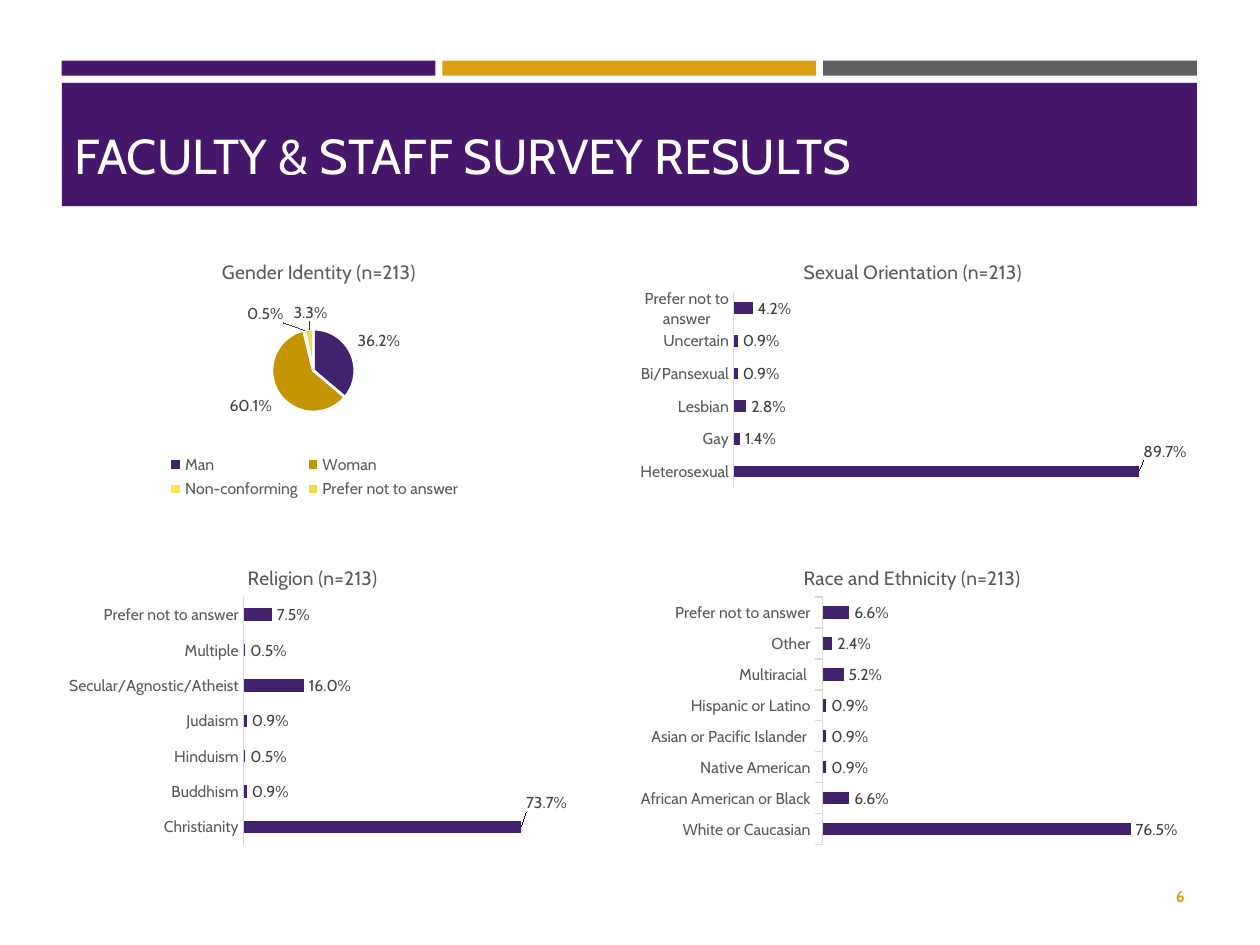
from pptx import Presentation
from pptx.util import Pt
from pptx.dml.color import RGBColor
from pptx.chart.data import CategoryChartData
from pptx.enum.chart import (XL_CHART_TYPE as ChartType, XL_LABEL_POSITION as LabelPos,
                             XL_LEGEND_POSITION as LegendPos, XL_TICK_MARK as Tick,
                             XL_TICK_LABEL_POSITION as TickLabels)
from pptx.enum.shapes import MSO_SHAPE as Preset
from pptx.enum.text import MSO_ANCHOR as Anchor, PP_ALIGN as Align
from pptx.oxml import parse_xml
from pptx.oxml.ns import nsdecls, qn

# Content
TITLE = "FACULTY & STAFF SURVEY RESULTS"
PAGE_NUMBER = "6"
# box: left, top, width, height in points; title_at and plot: fractions of the box
# nudge: vertical shift of the first label; data run from the bottom bar upwards
CHARTS = [
    dict(title="Gender Identity (n=213)", box=(35.3, 135.4, 288.7, 152.6),
         title_at=(0.31, 0.07), plot=(0.416, 0.345, 0.164, 0.311), pie=True,
         data=[("Man ", 0.362), ("Woman", 0.601), ("Non-conforming", 0.005),
               ("Prefer not to answer", 0.033)]),
    dict(title="Sexual Orientation (n=213)", box=(360, 135.4, 324, 146.9),
         title_at=(0.3, 0.07), plot=(0.183, 0.214, 0.796, 0.763),
         maximum=1, gap=182, tick=Tick.NONE, nudge=-0.08,
         data=[("Heterosexual", 0.897), ("Gay", 0.014), ("Lesbian", 0.028),
               ("Bi/Pansexual", 0.009), ("Uncertain", 0.009),
               ("Prefer not to answer", 0.042)]),
    dict(title="Religion (n=213)", box=(36, 310.3, 288, 175.7),
         title_at=(0.36, 0.06), plot=(0.359, 0.176, 0.599, 0.805),
         maximum=0.8, gap=182, tick=Tick.NONE, nudge=-0.08,
         data=[("Christianity", 0.737), ("Buddhism", 0.009), ("Hinduism", 0.005),
               ("Judaism", 0.009), ("Secular/Agnostic/Atheist", 0.16),
               ("Multiple", 0.005), ("Prefer not to answer", 0.075)]),
    dict(title="Race and Ethnicity (n=213)", box=(360, 310.3, 324, 175.7),
         title_at=(0.3, 0.06), plot=(0.34, 0.176, 0.639, 0.805),
         maximum=0.9, gap=150, tick=Tick.OUTSIDE,
         data=[("White or Caucasian", 0.765), ("African American or Black", 0.066),
               ("Native American", 0.009), ("Asian or Pacific Islander ", 0.009),
               ("Hispanic or Latino", 0.009), ("Multiracial ", 0.052),
               ("Other", 0.024), ("Prefer not to answer", 0.066)]),
]


class Theme:
    font = "Cabin"
    purple, gold, grey, white = "46166B", "DB9F11", "5F6062", "FFFFFF"
    bar, text, label, axis = "42226C", "595959", "404040", "D9D9D9"
    slices = ["42226C", "C49500", "FDE349", "F7D543"]
    title, chart_title, small = 28, 11, 9
    percent = "0.0%"


def rgb(code):
    return RGBColor.from_string(code)


def style(font, size, color, bold=False):
    font.name, font.size, font.bold = Theme.font, Pt(size), bold
    font.color.rgb = rgb(color)


def paint(part, color):
    part.format.fill.solid()
    part.format.fill.fore_color.rgb = rgb(color)


def add_band(page, left, top, width, height, color):
    band = page.shapes.add_shape(Preset.RECTANGLE, Pt(left), Pt(top), Pt(width), Pt(height))
    band.shadow.inherit = False
    band.fill.solid()
    band.fill.fore_color.rgb = rgb(color)
    band.line.fill.background()


def layout_xml(x, y, width=None, height=None, kind="edge", inner=False):
    parts = '<c:layoutTarget val="inner"/>' if inner else ""
    if kind == "edge":
        parts += '<c:xMode val="edge"/><c:yMode val="edge"/>'
    parts += f'<c:x val="{x}"/><c:y val="{y}"/>'
    if width:
        parts += f'<c:w val="{width}"/><c:h val="{height}"/>'
    return parse_xml(f'<c:layout {nsdecls("c")}><c:manualLayout>{parts}'
                     '</c:manualLayout></c:layout>')


def set_layout(parent, layout, after=None):
    for old in parent.findall(qn("c:layout")):
        parent.remove(old)
    if after is None:
        parent.insert(0, layout)
    else:
        parent.find(qn(after)).addnext(layout)


def format_pie(chart, plot):
    for index, color in enumerate(Theme.slices):
        point = plot.series[0].points[index]
        paint(point, color)
        point.format.line.color.rgb = rgb(Theme.white)
        point.format.line.width = Pt(1.5)
    plot.data_labels.position = LabelPos.BEST_FIT
    chart.has_legend = True
    chart.legend.position = LegendPos.BOTTOM
    chart.legend.include_in_layout = False
    style(chart.legend.font, Theme.small, Theme.text)


def format_bars(chart, plot, item):
    plot.gap_width = item["gap"]
    series = plot.series[0]
    paint(series, Theme.bar)
    plot.data_labels.position = LabelPos.OUTSIDE_END
    names, values = chart.category_axis, chart.value_axis
    names.major_tick_mark = item["tick"]
    names.tick_label_position = TickLabels.NEXT_TO_AXIS
    names.format.line.color.rgb = rgb(Theme.axis)
    names.format.line.width = Pt(0.75)
    style(names.tick_labels.font, Theme.small, Theme.text)
    values.minimum_scale, values.maximum_scale = 0, item["maximum"]
    values.has_major_gridlines = False
    values.visible = False
    if "nudge" in item:  # lift the label of the longest bar
        label = series.points[0].data_label
        style(label.font, Theme.small, Theme.label)
        label.position = LabelPos.OUTSIDE_END
        node = series._element.find(".//" + qn("c:dLbl"))
        set_layout(node, layout_xml(0, item["nudge"], kind="factor"), "c:idx")
        node.find(qn("c:layout")).addnext(parse_xml(
            f'<c:numFmt {nsdecls("c")} formatCode="{Theme.percent}" sourceLinked="0"/>'))


def add_survey_chart(page, item):
    is_pie = item.get("pie", False)
    data = CategoryChartData(number_format=Theme.percent)
    data.categories = [name for name, _ in item["data"]]
    data.add_series("Series 1", [value for _, value in item["data"]])
    kind = ChartType.PIE if is_pie else ChartType.BAR_CLUSTERED
    chart = page.shapes.add_chart(kind, *map(Pt, item["box"]), data).chart
    chart.has_legend = False
    style(chart.font, Theme.small, Theme.text)

    # Title and plot area
    chart.has_title = True
    chart.chart_title.text_frame.text = item["title"]
    style(chart.chart_title.text_frame.paragraphs[0].runs[0].font,
          Theme.chart_title, Theme.text)
    set_layout(chart.chart_title._element, layout_xml(*item["title_at"]), "c:tx")
    set_layout(chart._chartSpace.chart.plotArea, layout_xml(*item["plot"], inner=True))

    # Value labels, then the parts of each chart kind
    plot = chart.plots[0]
    plot.vary_by_categories = is_pie
    plot.has_data_labels = True
    labels = plot.series[0].data_labels if "nudge" in item else plot.data_labels
    for target in (plot.data_labels, labels):
        target.show_value, target.show_percentage = True, False
        target.number_format, target.number_format_is_linked = Theme.percent, False
        style(target.font, Theme.small, Theme.label)
    if is_pie:
        format_pie(chart, plot)
    else:
        labels.position = LabelPos.OUTSIDE_END
        format_bars(chart, plot, item)


def main():
    deck = Presentation()
    deck.slide_width, deck.slide_height = Pt(720), Pt(540)
    page = deck.slides.add_slide(deck.slide_layouts[5])

    # Three colour strips over the title band
    left, width, gap = 35.3, 648.7, 4
    strip = (width - 2 * gap) / 3
    for index, color in enumerate([Theme.purple, Theme.gold, Theme.grey]):
        add_band(page, left + index * (strip + gap), 34.6, strip, 8.6, color)
    add_band(page, left, 47.3, width, 70.5, Theme.purple)

    # Title, moved in front of its band
    title = page.shapes.title
    title.left, title.top, title.width, title.height = Pt(left), Pt(54), Pt(width), Pt(54.7)
    page.shapes._spTree.append(title._element)
    frame = title.text_frame
    frame.text = TITLE
    frame.vertical_anchor = Anchor.BOTTOM
    frame.paragraphs[0].alignment = Align.LEFT
    style(frame.paragraphs[0].runs[0].font, Theme.title, Theme.white)

    for item in CHARTS:
        add_survey_chart(page, item)

    # Page number
    box = page.shapes.add_textbox(Pt(614), Pt(497.5), Pt(70), Pt(28.8))
    box.text_frame.word_wrap = True
    box.text_frame.vertical_anchor = Anchor.MIDDLE
    box.text_frame.text = PAGE_NUMBER
    para = box.text_frame.paragraphs[0]
    para.alignment = Align.RIGHT
    style(para.runs[0].font, Theme.small, Theme.gold, bold=True)

    deck.save("out.pptx")


if __name__ == "__main__":
    main()
